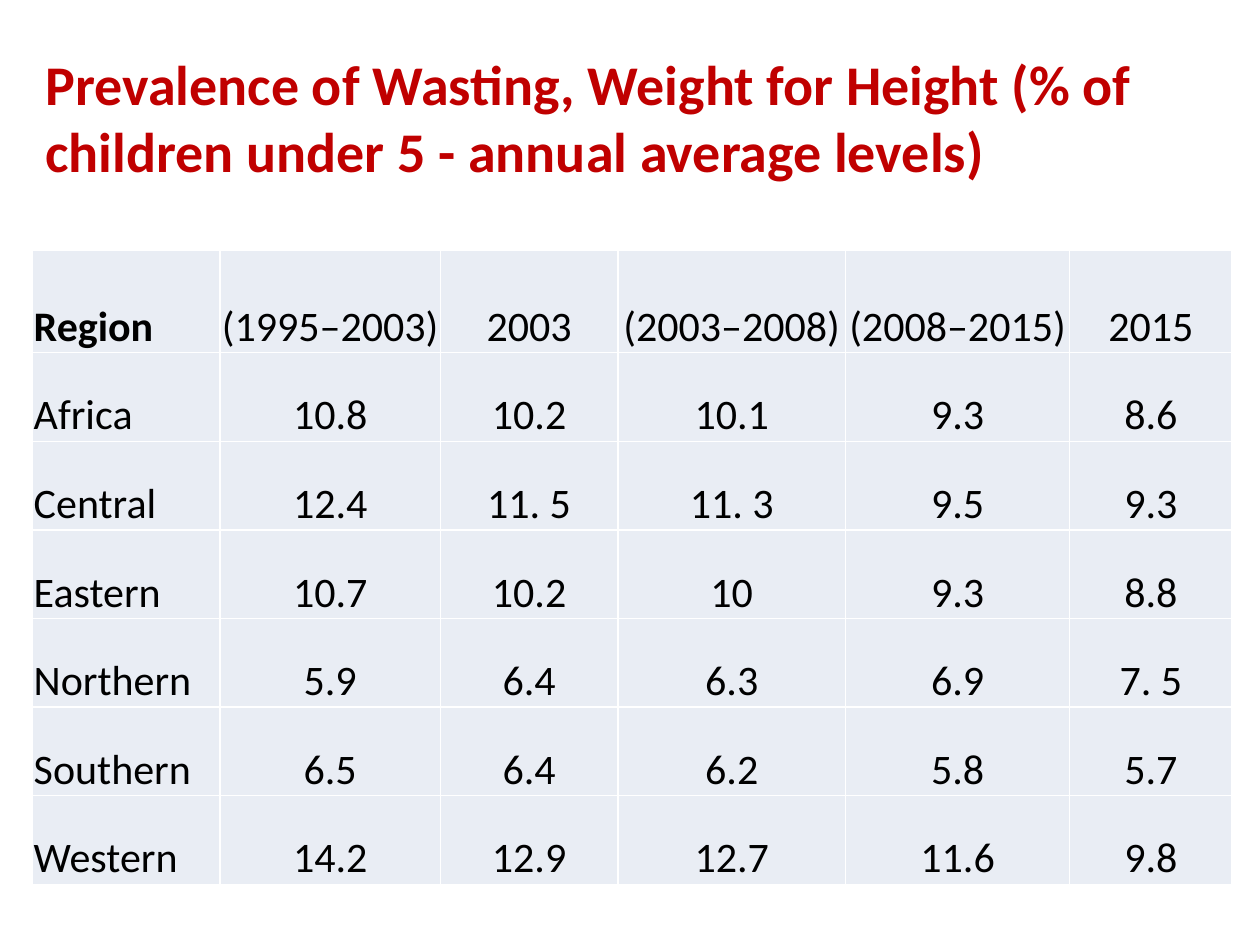
from lxml.etree import SubElement
from pptx import Presentation
from pptx.dml.color import RGBColor
from pptx.enum.text import MSO_ANCHOR as Anchor, PP_ALIGN as Align
from pptx.oxml.ns import qn
from pptx.util import Cm, Pt

FONT = "Calibri"
TITLE = "Prevalence of Wasting, Weight for Height (% of children under 5 - annual average levels)"
WASTING = [
    ["Region", "(1995–2003)", "2003", "(2003–2008)", "(2008–2015)", "2015"],
    ["Africa", "10.8", "10.2", "10.1", "9.3", "8.6"],
    ["Central", "12.4", "11. 5", "11. 3", "9.5", "9.3"],
    ["Eastern", "10.7", "10.2", "10", "9.3", "8.8"],
    ["Northern", "5.9", "6.4", "6.3", "6.9", "7. 5"],
    ["Southern", "6.5", "6.4", "6.2", "5.8", "5.7"],
    ["Western", "14.2", "12.9", "12.7", "11.6", "9.8"],
]
PERIOD_WIDTHS = [3.78, 4.45, 3.58, 4.6, 4.52, 3.28]
HEADER_HEIGHT = 2.06


def color(hex_code):
    """Return the colour for a hex string."""
    return RGBColor.from_string(hex_code)


def add_run(paragraph, words, size, hex_code, bold=False, align=Align.LEFT):
    """Add one formatted run to a paragraph."""
    paragraph.alignment = align
    run = paragraph.add_run()
    run.text = words
    run.font.name = FONT
    run.font.size = Pt(size)
    run.font.bold = bold
    run.font.color.rgb = color(hex_code)


def add_borders(cell, hex_code, width):
    """Draw a solid line on all four sides of a cell."""
    properties = cell._tc.get_or_add_tcPr()
    for side in ("a:lnL", "a:lnR", "a:lnT", "a:lnB"):
        line = SubElement(properties, qn(side), w=str(Pt(width)))
        solid = SubElement(line, qn("a:solidFill"))
        SubElement(solid, qn("a:srgbClr"), val=hex_code)


def place_title(slide, left, top, width, height):
    """Fit the title placeholder into its box and fill it."""
    title = slide.shapes.title
    title.left, title.top = Cm(left), Cm(top)
    title.width, title.height = Cm(width), Cm(height)
    frame = title.text_frame
    frame.word_wrap = True
    frame.vertical_anchor = Anchor.MIDDLE
    add_run(frame.paragraphs[0], TITLE, 32, "C00000", bold=True)


def fill_cell(cell, words, is_region, is_heading):
    """Format one cell and write its text."""
    cell.margin_left = cell.margin_right = cell.margin_top = Cm(0.02)
    cell.margin_bottom = 0
    cell.vertical_anchor = Anchor.BOTTOM
    add_borders(cell, "FFFFFF", 1)
    cell.fill.solid()
    cell.fill.fore_color.rgb = color("E9EDF4")
    add_run(cell.text_frame.paragraphs[0], words, 24, "000000",
            bold=is_region and is_heading,
            align=Align.LEFT if is_region else Align.CENTER)


def place_wasting_table(slide, left, top, width, height):
    """Build the table of regions and periods in its box."""
    table = slide.shapes.add_table(len(WASTING), len(PERIOD_WIDTHS), Cm(left), Cm(top),
                                   Cm(width), Cm(height)).table
    for column, share in zip(table.columns, PERIOD_WIDTHS):
        column.width = Cm(width * share / sum(PERIOD_WIDTHS))
    region_height = (height - HEADER_HEIGHT) / (len(WASTING) - 1)
    for r, levels in enumerate(WASTING):
        table.rows[r].height = Cm(region_height if r else HEADER_HEIGHT)
        for c, words in enumerate(levels):
            fill_cell(table.cell(r, c), words, c == 0, r == 0)


def main():
    """Build and save the slide."""
    deck = Presentation()
    deck.slide_width, deck.slide_height = Cm(25.4), Cm(19.05)
    slide = deck.slides.add_slide(deck.slide_layouts[5])
    place_title(slide, 0.66, 0.76, 23.9, 3.18)
    place_wasting_table(slide, 0.66, 5.05, 24.18, 12.78)
    deck.save("out.pptx")


if __name__ == "__main__":
    main()
